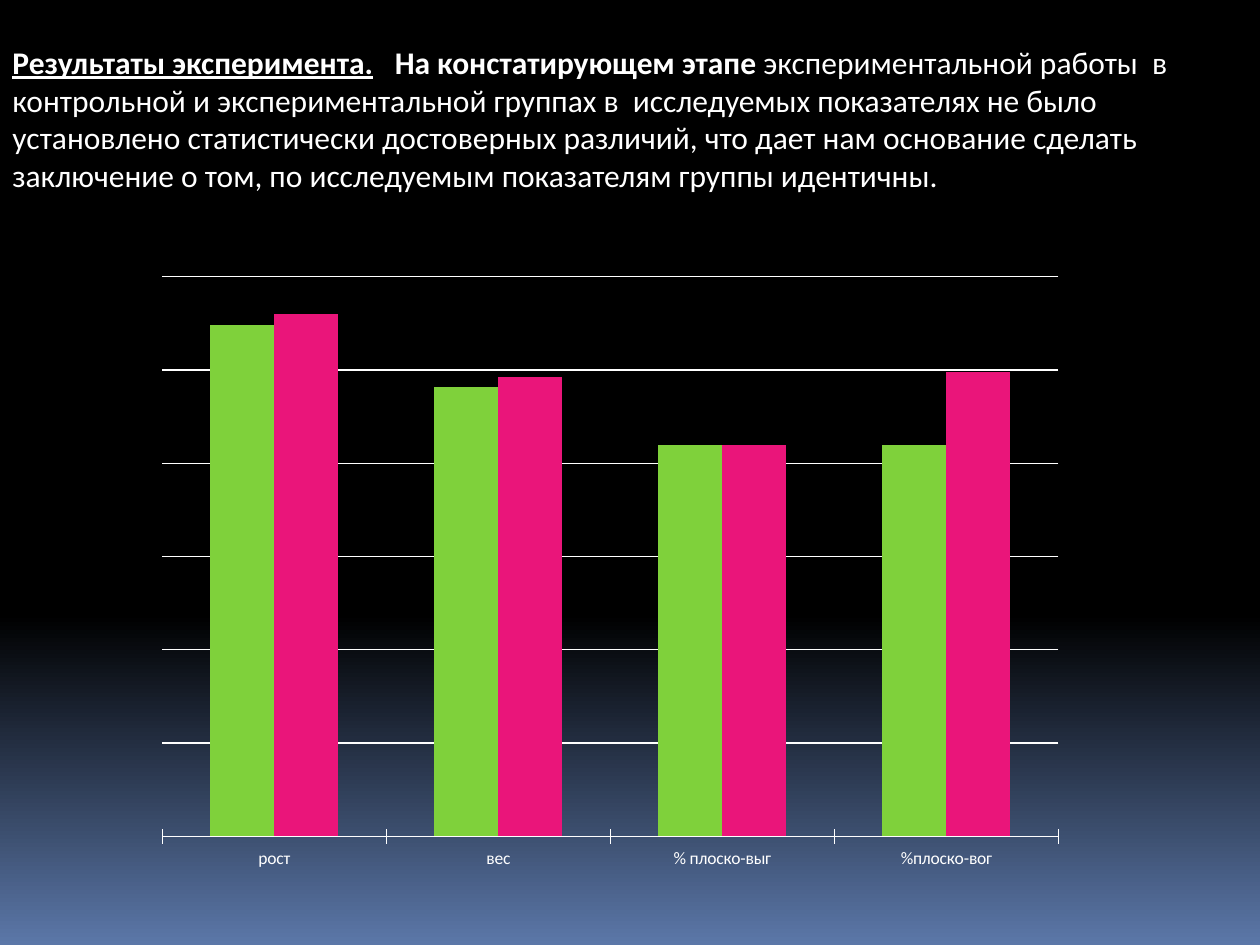
from lxml import etree
from pptx import Presentation
from pptx.chart.data import CategoryChartData
from pptx.dml.color import RGBColor
from pptx.enum.chart import XL_CHART_TYPE, XL_TICK_MARK
from pptx.enum.text import MSO_AUTO_SIZE
from pptx.oxml.ns import qn
from pptx.util import Inches, Pt

COLUMNS = XL_CHART_TYPE.COLUMN_CLUSTERED
CROSS = XL_TICK_MARK.CROSS
NO_TICK = XL_TICK_MARK.NONE
FIT_SHAPE = MSO_AUTO_SIZE.SHAPE_TO_FIT_TEXT

FONT = "Calibri"
COLORS = {
    "night": "000000",
    "horizon": "5B77A8",
    "text": "FFFFFF",
    "control": "7FD13B",
    "experimental": "EA157A",
}
SUMMARY = [
    ("Результаты эксперимента.", {"bold": True, "underline": True}),
    ("   ", {}),
    ("На констатирующем этапе", {"bold": True}),
    (" экспериментальной работы  в контрольной и экспериментальной группах в  "
     "исследуемых показателях не было установлено статистически достоверных "
     "различий, что дает нам основание сделать заключение о том, по исследуемым "
     "показателям группы идентичны.", {}),
]
CATEGORIES = ["рост", "вес", "% плоско-выг", "%плоско-вог"]
SERIES = [
    ("Series 1", [98, 86, 75, 75], "control"),
    ("Series 2", [100, 88, 75, 89], "experimental"),
]
GRID_STEP = 17.86
GRID_COUNT = 6
PLOT_LAYOUT = {"x": 0.02, "y": 0.02, "w": 0.96, "h": 0.91}


def color(name):
    return RGBColor.from_string(COLORS[name])


def set_format(target, values):
    for name, value in values.items():
        setattr(target, name, value)


def set_font(font, size, **values):
    set_format(font, {"name": FONT, "size": Pt(size), **values})
    font.color.rgb = color("text")


def set_line(line):
    line.color.rgb = color("text")
    line.width = Pt(0.75)


def paint_background(page):
    fill = page.background.fill
    fill.gradient()
    fill.gradient_angle = 270
    stops = [("night", 0.65), ("horizon", 1)]
    for stop, (name, position) in zip(fill.gradient_stops, stops):
        stop.color.rgb = color(name)
        stop.position = position


def add_summary(page):
    box = page.shapes.add_textbox(Inches(0), Inches(0.29), Inches(10), Inches(1.31))
    set_format(box.text_frame, {"word_wrap": True, "auto_size": FIT_SHAPE})
    para = box.text_frame.paragraphs[0]
    for text, values in SUMMARY:
        span = para.add_run()
        span.text = text
        set_font(span.font, 18, **values)


def place_plot(chart):
    area = chart.plots[0]._element.getparent()
    for old in area.findall(qn("c:layout")):
        area.remove(old)
    layout = etree.Element(qn("c:layout"))
    area.insert(0, layout)
    manual = etree.SubElement(layout, qn("c:manualLayout"))
    settings = {"layoutTarget": "inner", "xMode": "edge", "yMode": "edge", **PLOT_LAYOUT}
    for name, value in settings.items():
        etree.SubElement(manual, qn(f"c:{name}")).set("val", str(value))


def format_axes(chart):
    category_axis = chart.category_axis
    set_format(category_axis, {"major_tick_mark": CROSS, "minor_tick_mark": NO_TICK})
    set_line(category_axis.format.line)
    value_axis = chart.value_axis
    set_format(value_axis, {
        "visible": False,
        "has_major_gridlines": True,
        "minimum_scale": 0,
        "maximum_scale": GRID_STEP * GRID_COUNT,
        "major_unit": GRID_STEP,
    })
    set_line(value_axis.major_gridlines.format.line)


def add_results_chart(page):
    data = CategoryChartData()
    data.categories = CATEGORIES
    for name, values, _ in SERIES:
        data.add_series(name, values)
    chart = page.shapes.add_chart(
        COLUMNS, Inches(1.14), Inches(2.1), Inches(7.41), Inches(4.88), data
    ).chart
    set_format(chart, {"has_legend": False, "has_title": False})
    set_font(chart.font, 10)
    plot = chart.plots[0]
    set_format(plot, {"vary_by_categories": False, "gap_width": 150, "overlap": 0})
    for series, (_, _, group) in zip(plot.series, SERIES):
        series.format.fill.solid()
        series.format.fill.fore_color.rgb = color(group)
    format_axes(chart)
    place_plot(chart)


def main():
    deck = Presentation()
    set_format(deck, {"slide_width": Inches(10), "slide_height": Inches(7.5)})
    page = deck.slides.add_slide(deck.slide_layouts[6])
    paint_background(page)
    add_summary(page)
    add_results_chart(page)
    deck.save("out.pptx")


if __name__ == "__main__":
    main()
